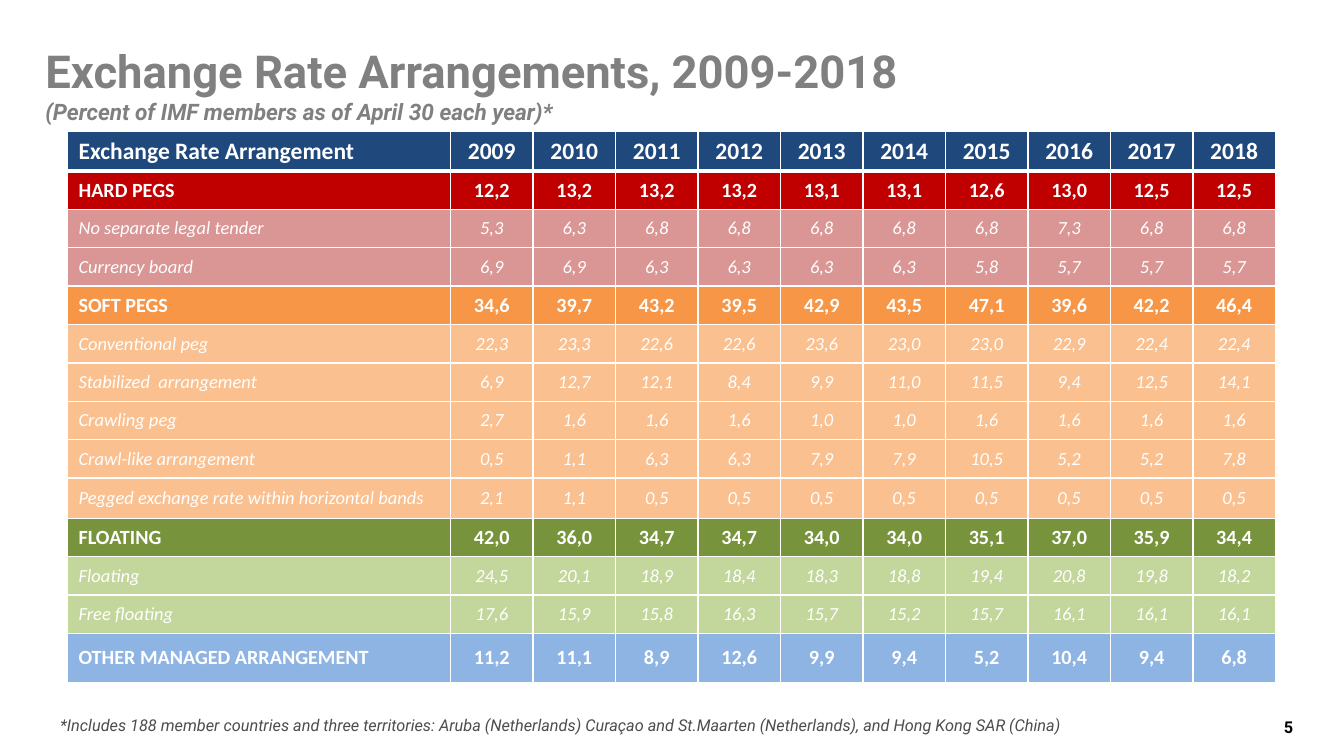
from dataclasses import dataclass

from lxml import etree
from pptx import Presentation
from pptx import util as u
from pptx.dml import color
from pptx.enum import text
from pptx.oxml import ns

Pt = u.Pt


@dataclass(frozen=True)
class Theme:
    heading_font: str = "Roboto"
    table_font: str = "Calibri"
    title_size: float = 27
    subtitle_size: float = 13.5
    note_size: float = 9.7
    header_size: float = 14
    group_size: float = 12
    detail_size: float = 11
    title: str = "808080"
    note: str = "4D4D4D"
    black: str = "000000"
    white: str = "FFFFFF"
    header: str = "1F497D"
    hard: str = "C00000"
    hard_light: str = "D99694"
    soft: str = "F79646"
    soft_light: str = "FAC090"
    floating: str = "77933C"
    floating_light: str = "C3D69B"
    other: str = "8EB4E3"


THEME = Theme()
LEFT, CENTER = text.PP_ALIGN.LEFT, text.PP_ALIGN.CENTER
INSET_X, INSET_Y = 6.8, 3

# Each group: dark fill, light fill, then its rows with the total first
GROUPS = [
    (THEME.hard, THEME.hard_light, [
        ("HARD PEGS", "12,2 13,2 13,2 13,2 13,1 13,1 12,6 13,0 12,5 12,5"),
        ("No separate legal tender", "5,3 6,3 6,8 6,8 6,8 6,8 6,8 7,3 6,8 6,8"),
        ("Currency board", "6,9 6,9 6,3 6,3 6,3 6,3 5,8 5,7 5,7 5,7"),
    ]),
    (THEME.soft, THEME.soft_light, [
        ("SOFT PEGS", "34,6 39,7 43,2 39,5 42,9 43,5 47,1 39,6 42,2 46,4"),
        ("Conventional peg", "22,3 23,3 22,6 22,6 23,6 23,0 23,0 22,9 22,4 22,4"),
        ("Stabilized  arrangement", "6,9 12,7 12,1 8,4 9,9 11,0 11,5 9,4 12,5 14,1"),
        ("Crawling peg", "2,7 1,6 1,6 1,6 1,0 1,0 1,6 1,6 1,6 1,6"),
        ("Crawl-like arrangement", "0,5 1,1 6,3 6,3 7,9 7,9 10,5 5,2 5,2 7,8"),
        ("Pegged exchange rate within horizontal bands",
         "2,1 1,1 0,5 0,5 0,5 0,5 0,5 0,5 0,5 0,5"),
    ]),
    (THEME.floating, THEME.floating_light, [
        ("FLOATING", "42,0 36,0 34,7 34,7 34,0 34,0 35,1 37,0 35,9 34,4"),
        ("Floating", "24,5 20,1 18,9 18,4 18,3 18,8 19,4 20,8 19,8 18,2"),
        ("Free floating", "17,6 15,9 15,8 16,3 15,7 15,2 15,7 16,1 16,1 16,1"),
    ]),
    (THEME.other, THEME.other, [
        ("OTHER MANAGED ARRANGEMENT", "11,2 11,1 8,9 12,6 9,9 9,4 5,2 10,4 9,4 6,8"),
    ]),
]
YEARS = [str(year) for year in range(2009, 2019)]
LABEL_WIDTH, YEAR_WIDTH = 228.2, 49.1
HEADER_HEIGHT, ROW_HEIGHT, BANDS_HEIGHT, LAST_HEIGHT = 23.8, 22.85, 24, 29.2


def write(para, words, *, size, ink, font=THEME.heading_font,
          bold=False, italic=False, align=LEFT):
    para.alignment = align
    span = para.add_run()
    span.text = words
    span.font.name, span.font.size = font, Pt(size)
    span.font.bold, span.font.italic = bold, italic
    span.font.color.rgb = color.RGBColor.from_string(ink)


def set_margins(area):
    area.margin_left = area.margin_right = Pt(INSET_X)
    area.margin_top = area.margin_bottom = Pt(INSET_Y)


def add_text(page, left, top, width, height, lines, anchor=text.MSO_ANCHOR.TOP):
    box = page.shapes.add_textbox(Pt(left), Pt(top), Pt(width), Pt(height))
    frame = box.text_frame
    frame.word_wrap = True
    frame.vertical_anchor = anchor
    set_margins(frame)
    for index, (words, style) in enumerate(lines):
        para = frame.add_paragraph() if index else frame.paragraphs[0]
        write(para, words, **style)


def add_borders(cell, top, bottom):
    properties = cell._tc.get_or_add_tcPr()
    for side, width in (("L", 1), ("R", 1), ("T", top), ("B", bottom)):
        line = etree.SubElement(properties, ns.qn(f"a:ln{side}"), w=str(Pt(width)))
        fill = etree.SubElement(line, ns.qn("a:solidFill"))
        etree.SubElement(fill, ns.qn("a:srgbClr"), val=THEME.white)


def fill_row(table, index, values, fill, **style):
    top = 3 if index == 1 else 1
    bottom = 3 if index == 0 else 1
    for column, words in enumerate(values):
        cell = table.cell(index, column)
        add_borders(cell, top, bottom)
        cell.fill.solid()
        cell.fill.fore_color.rgb = color.RGBColor.from_string(fill)
        cell.vertical_anchor = text.MSO_ANCHOR.MIDDLE
        set_margins(cell)
        write(cell.text_frame.paragraphs[0], words, font=THEME.table_font,
              ink=THEME.white, align=CENTER if column else LEFT, **style)


def add_rate_table(page, left, top):
    row_count = sum(len(rows) for _, _, rows in GROUPS)
    heights = [HEADER_HEIGHT] + [ROW_HEIGHT] * (row_count - 1) + [LAST_HEIGHT]
    heights[9] = BANDS_HEIGHT
    widths = [LABEL_WIDTH] + [YEAR_WIDTH] * len(YEARS)
    table = page.shapes.add_table(len(heights), len(widths), Pt(left), Pt(top),
                                  Pt(sum(widths)), Pt(sum(heights))).table
    table.first_row = table.horz_banding = False
    for column, width in zip(table.columns, widths):
        column.width = Pt(width)
    for row, height in zip(table.rows, heights):
        row.height = Pt(height)

    fill_row(table, 0, ["Exchange Rate Arrangement", *YEARS], THEME.header,
             size=THEME.header_size, bold=True)
    index = 1
    for dark, light, rows in GROUPS:
        for position, (label, rates) in enumerate(rows):
            is_total = position == 0
            fill_row(table, index, [label, *rates.split()],
                     dark if is_total else light,
                     size=THEME.group_size if is_total else THEME.detail_size,
                     bold=is_total, italic=not is_total)
            index += 1


def main():
    deck = Presentation()
    deck.slide_width, deck.slide_height = Pt(800), Pt(450)
    page = deck.slides.add_slide(deck.slide_layouts[6])

    # Title and subtitle
    add_text(page, 20.2, 21.3, 758.9, 56.2, [
        ("Exchange Rate Arrangements, 2009-2018",
         dict(size=THEME.title_size, ink=THEME.title, bold=True)),
        ("(Percent of IMF members as of April 30 each year)*",
         dict(size=THEME.subtitle_size, ink=THEME.title, bold=True, italic=True)),
    ], anchor=text.MSO_ANCHOR.BOTTOM)

    # Rates by arrangement and year
    add_rate_table(page, 40, 78)

    # Footnote and page number
    add_text(page, 29, 422.5, 688, 17.5, [
        ("*Includes 188 member countries and three territories: Aruba (Netherlands) "
         "Curaçao and St.Maarten (Netherlands), and Hong Kong SAR (China)",
         dict(size=THEME.note_size, ink=THEME.note, italic=True)),
    ])
    add_text(page, 753, 424.2, 28, 17.5, [
        ("5", dict(size=THEME.note_size, ink=THEME.black, bold=True, align=CENTER)),
    ])

    deck.save("out.pptx")


if __name__ == "__main__":
    main()
